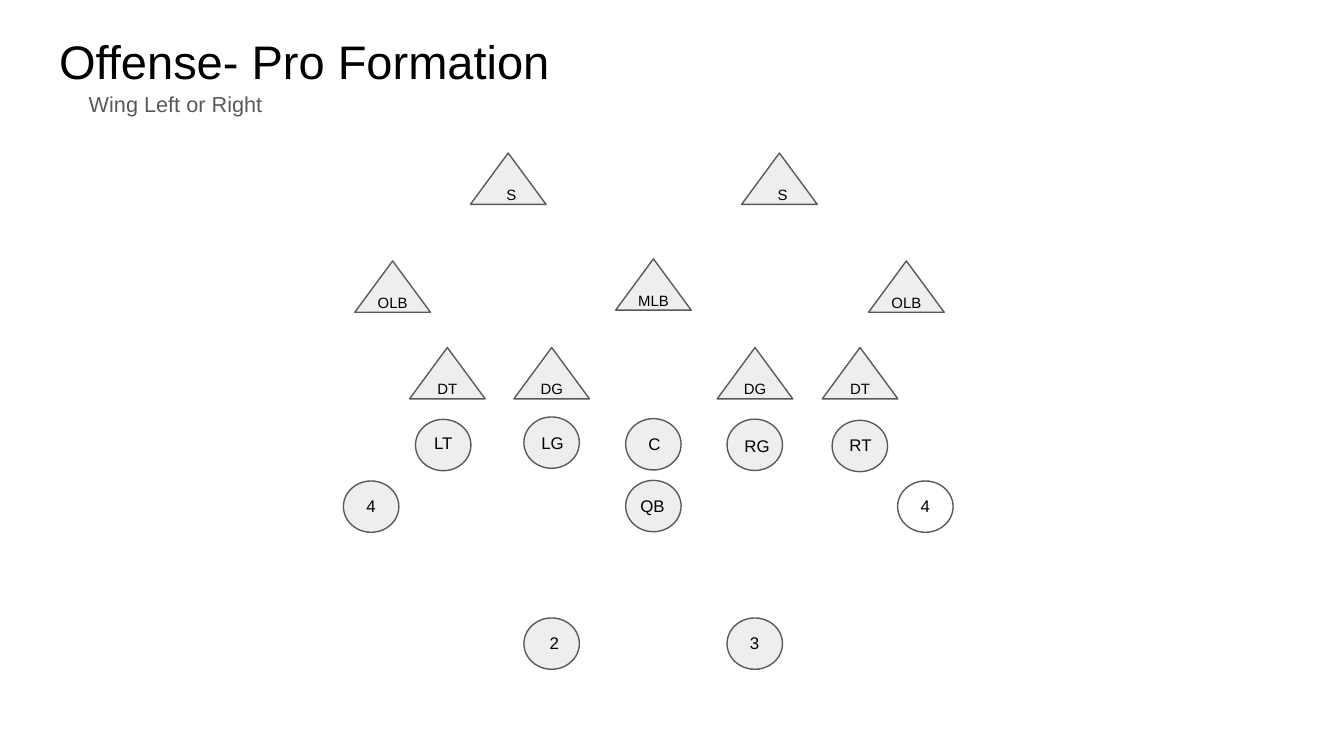
from dataclasses import dataclass

from lxml import etree
from pptx import Presentation
from pptx.dml.color import RGBColor
from pptx.enum import shapes, text
from pptx.oxml import ns
from pptx.util import Pt

HUES = {"ink": "000000", "gray": "595959", "pale": "EEEEEE"}
FONT = "Arial"
LEFT, MID = text.PP_ALIGN.LEFT, text.PP_ALIGN.CENTER
TOP, BASE = text.MSO_ANCHOR.TOP, text.MSO_ANCHOR.BOTTOM


@dataclass
class Kind:
    form: shapes.MSO_SHAPE
    wide: float
    high: float
    size: float
    tall: float  # label height


@dataclass
class Player:
    name: str
    x: float
    y: float
    dx: float = 3.4  # label offset from the marker
    dy: float = 10.1
    span: float = 33.8  # label width
    align: text.PP_ALIGN = MID
    solid: bool = True


GUARD = Kind(shapes.MSO_SHAPE.FLOWCHART_EXTRACT, 40.5, 27.5, 8, 24.5)
RUNNER = Kind(shapes.MSO_SHAPE.OVAL, 29.7, 27.5, 9, 25.2)

DEFENSE = [
    Player("S", 252, 82, 12.2, span=15.1, align=LEFT),
    Player("S", 397.3, 82, 12.2, span=15.1, align=LEFT),
    Player("OLB", 190.1, 139.8),
    Player("MLB", 329.8, 138.7),
    Player("OLB", 465.3, 139.8),
    Player("DT", 219.4, 186.2),
    Player("DG", 275.3, 186.2),
    Player("DG", 384.2, 186.2),
    Player("DT", 440.5, 186.2),
]
OFFENSE = [
    Player("LT", 222.6, 224.7, 2.9, 0, 26.6, LEFT),
    Player("LG", 280.7, 223.4, 2.2, 1.4, 29.5, LEFT),
    Player("C", 335.2, 224.3, 5, 0.7, 20.9, LEFT),
    Player("RG", 389.5, 224.6, 2.2, 1.4, 29.5, LEFT),
    Player("RT", 445.8, 225.2, 2.2, 0.7, 29.5, LEFT),
    Player("QB", 335.2, 257.4, 0.7, 0.7, 29.5, LEFT),
    Player("4", 184, 257.7, 4.3, 0.7, 20.9),
    Player("4", 480.9, 257.7, 4.3, 0.7, 20.9, solid=False),
    Player("2", 280.7, 331.1, 5.8, 0.7, 20.9),
    Player("3", 389.5, 331.1, 4.3, 0.7, 20.9),
]


def tint(key: str) -> RGBColor:
    return RGBColor.from_string(HUES[key])


def place(box, x: float, y: float, wide: float, high: float) -> None:
    box.left, box.top, box.width, box.height = map(Pt, (x, y, wide, high))


def write(box, words: str, size: float, hue: str, align=LEFT, anchor=TOP):
    frame = box.text_frame
    frame.text = words
    frame.word_wrap = True
    frame.auto_size = text.MSO_AUTO_SIZE.NONE
    frame.vertical_anchor = anchor
    frame.margin_left = frame.margin_right = Pt(7.2)
    frame.margin_top = frame.margin_bottom = Pt(7.2)
    para = frame.paragraphs[0]
    para.alignment = align
    font = para.runs[0].font
    font.name, font.size = FONT, Pt(size)
    font.color.rgb = tint(hue)
    return para


def draw(slide, kind: Kind, man: Player) -> None:
    mark = slide.shapes.add_shape(
        kind.form, Pt(man.x), Pt(man.y), Pt(kind.wide), Pt(kind.high))
    mark.shadow.inherit = False
    if man.solid:
        mark.fill.solid()
        mark.fill.fore_color.rgb = tint("pale")
    else:
        mark.fill.background()
    mark.line.color.rgb = tint("gray")
    mark.line.width = Pt(0.75)
    label = slide.shapes.add_textbox(
        Pt(man.x + man.dx), Pt(man.y + man.dy), Pt(man.span), Pt(kind.tall))
    write(label, man.name, kind.size, "ink", man.align)


def main() -> None:
    deck = Presentation()
    deck.slide_width, deck.slide_height = Pt(720), Pt(405)
    slide = deck.slides.add_slide(deck.slide_layouts[1])

    # Heading
    title, body = slide.placeholders
    place(title, 24.5, 9.4, 671, 45.4)
    write(title, "Offense- Pro Formation", 25.2, "ink", anchor=BASE)
    place(body, 40.3, 42.5, 153.4, 41)
    para = write(body, "Wing Left or Right", 11.6, "gray")
    props = para._p.get_or_add_pPr()
    props.set("marL", "0")
    props.set("indent", "0")
    etree.SubElement(props, ns.qn("a:buNone"))
    para.line_spacing = 0.95
    para.space_before, para.space_after = Pt(0), Pt(12)

    # Players
    for kind, team in ((GUARD, DEFENSE), (RUNNER, OFFENSE)):
        for man in team:
            draw(slide, kind, man)

    deck.save("out.pptx")


if __name__ == "__main__":
    main()
